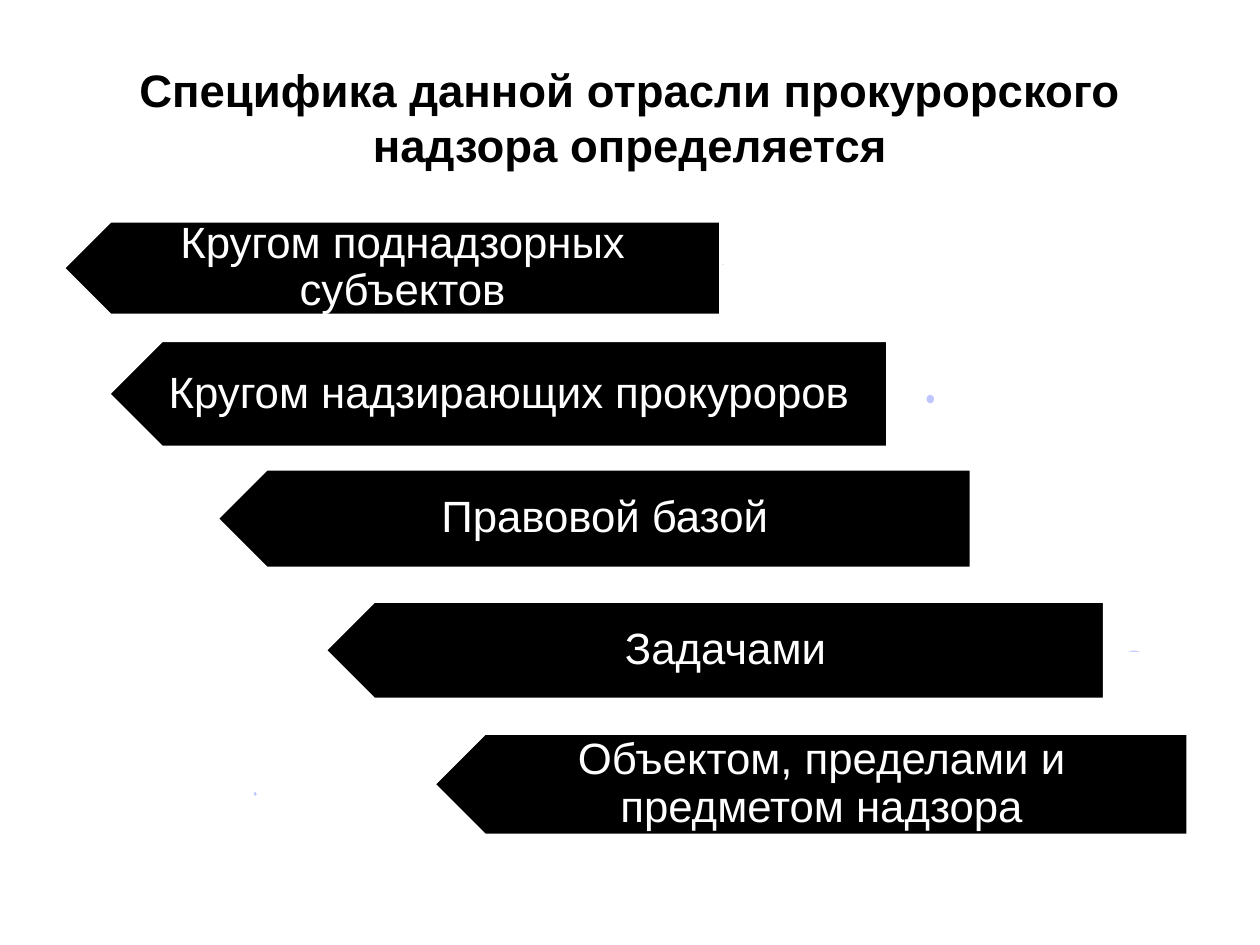
from pptx import Presentation
from pptx.dml.color import RGBColor
from pptx.enum.shapes import MSO_SHAPE
from pptx.enum.text import MSO_ANCHOR, PP_ALIGN
from pptx.util import Cm, Pt

BLACK = RGBColor(0x00, 0x00, 0x00)
WHITE = RGBColor(0xFF, 0xFF, 0xFF)
LILAC = RGBColor(0xBF, 0xC6, 0xFF)
PENTAGON = MSO_SHAPE.PENTAGON
OVAL = MSO_SHAPE.OVAL
MIDDLE = MSO_ANCHOR.MIDDLE
CENTER = PP_ALIGN.CENTER

TITLE = "Специфика данной отрасли прокурорского надзора определяется"
TITLE_BOX = (1.27, 0.76, 22.86, 3.18)
TITLE_INSETS = (0.25, 0.13, 0.25, 0.13)
ARROW_INSETS = (0.91, 0.25, 0.48, 0.25)

# Text, arrow box and dot box (left, top, width, height in cm)
FACTORS = [
    ("Кругом поднадзорных субъектов",
     (1.27, 4.45, 13.26, 1.91), (14.53, 5.28, 0.1, 0.1)),
    ("Кругом надзирающих прокуроров",
     (2.18, 6.86, 15.72, 2.16), (18.64, 7.92, 0.23, 0.25)),
    ("Правовой базой",
     (4.37, 9.45, 15.21, 2.01), (20.04, 10.11, 0.08, 0.33)),
    ("Задачами",
     (6.55, 12.12, 15.72, 1.98), (22.66, 13.08, 0.41, 0.1)),
    ("Объектом, пределами и предметом надзора",
     (8.74, 14.78, 15.21, 2.06), (5.08, 15.93, 0.13, 0.15)),
]


def to_cm(lengths):
    return [Cm(length) for length in lengths]


def add_outlined(slide, preset, box, fill):
    outlined = slide.shapes.add_shape(preset, *to_cm(box))
    outlined.shadow.inherit = False
    outlined.fill.solid()
    outlined.fill.fore_color.rgb = fill
    outlined.line.color.rgb = WHITE
    outlined.line.width = Pt(2)
    return outlined


def add_label(slide, text, box, insets, size, color, bold=False, spacing=1.0):
    frame = slide.shapes.add_textbox(*to_cm(box)).text_frame
    frame.word_wrap = True
    frame.vertical_anchor = MIDDLE
    (frame.margin_left, frame.margin_top,
     frame.margin_right, frame.margin_bottom) = to_cm(insets)
    frame.text = text
    paragraph = frame.paragraphs[0]
    paragraph.alignment = CENTER
    paragraph.line_spacing = spacing
    font = paragraph.runs[0].font
    font.name = "Arial"
    font.size = Pt(size)
    font.bold = bold
    font.color.rgb = color


def add_factor(slide, text, arrow_box, dot_box):
    # The arrow is turned to point left; its label stays upright on top
    arrow = add_outlined(slide, PENTAGON, arrow_box, BLACK)
    arrow.rotation = 180
    add_label(slide, text, arrow_box, ARROW_INSETS, 25, WHITE, spacing=0.9)
    add_outlined(slide, OVAL, dot_box, LILAC)


def main():
    presentation = Presentation()
    presentation.slide_width = Cm(25.4)
    presentation.slide_height = Cm(19.05)
    slide = presentation.slides.add_slide(presentation.slide_layouts[6])

    # Heading
    add_label(slide, TITLE, TITLE_BOX, TITLE_INSETS, 26, BLACK, bold=True)

    # Staircase of arrows
    for text, arrow_box, dot_box in FACTORS:
        add_factor(slide, text, arrow_box, dot_box)

    presentation.save("out.pptx")


if __name__ == "__main__":
    main()
